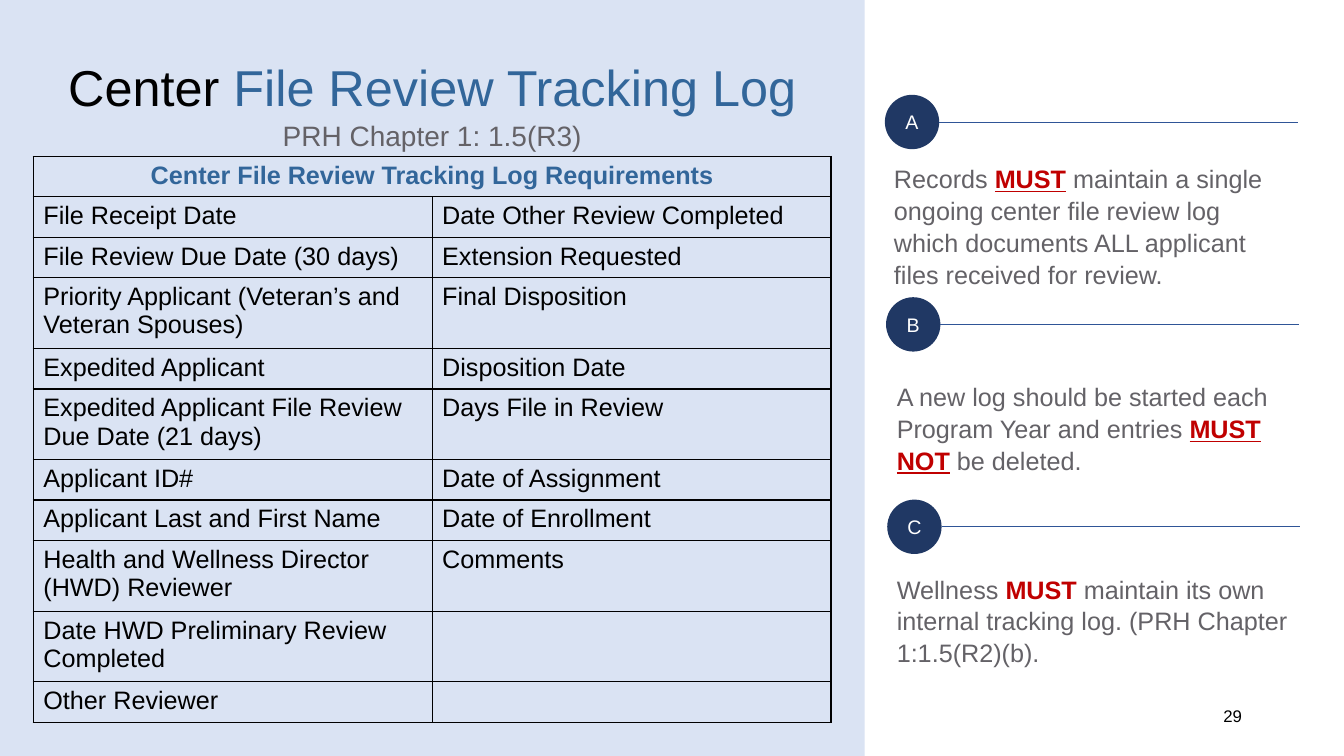
from lxml import etree
from pptx import Presentation
from pptx import util as u
from pptx.dml.color import RGBColor
from pptx.enum import shapes, text
from pptx.oxml.ns import qn

COLORS = {
    "panel": "DAE3F3", "black": "000000", "white": "FFFFFF", "blue": "32669A",
    "grey": "646267", "red": "C00000", "navy": "203864", "line": "2F5597",
}
REQUIREMENTS = [
    ("File Receipt Date", "Date Other Review Completed"),
    ("File Review Due Date (30 days)", "Extension Requested"),
    ("Priority Applicant (Veteran’s and Veteran Spouses)", "Final Disposition"),
    ("Expedited Applicant", "Disposition Date"),
    ("Expedited Applicant File Review Due Date (21 days)", "Days File in Review"),
    ("Applicant ID#", "Date of Assignment"),
    ("Applicant Last and First Name", "Date of Enrollment"),
    ("Health and Wellness Director (HWD) Reviewer", "Comments"),
    ("Date HWD Preliminary Review Completed", ""),
    ("Other Reviewer", ""),
]
ONE_LINE, TWO_LINES = 1.02, 1.78
LONGEST_LINE = 30
CENTER, RIGHT = text.PP_ALIGN.CENTER, text.PP_ALIGN.RIGHT


def color(name):
    return RGBColor.from_string(COLORS[name])


class SlideBuilder:
    def __init__(self, page, font="Arial"):
        self.page = page
        self.font = font

    def add_spans(self, para, spans, size, align=None, spacing=None):
        """Fill a paragraph from (words, colour, bold, underline) spans."""
        para.alignment = align
        para.line_spacing = spacing
        for words, tint, bold, underline in spans:
            span = para.add_run()
            span.text = words
            span.font.name = self.font
            span.font.size = u.Pt(size)
            span.font.bold = bold
            span.font.underline = underline
            span.font.color.rgb = color(tint)

    def shape(self, kind, left, top, width, height, fill):
        shape = self.page.shapes.add_shape(
            kind, u.Cm(left), u.Cm(top), u.Cm(width), u.Cm(height))
        shape.shadow.inherit = False
        shape.fill.solid()
        shape.fill.fore_color.rgb = color(fill)
        shape.line.fill.background()
        return shape

    def badge(self, letter, left, top, size):
        badge = self.shape(shapes.MSO_SHAPE.OVAL, left, top, size, size, "navy")
        frame = badge.text_frame
        frame.vertical_anchor = text.MSO_ANCHOR.MIDDLE
        self.add_spans(frame.paragraphs[0], [plain(letter, "white")], 14, CENTER)

    def rule(self, left, top, length):
        rule = self.page.shapes.add_connector(
            shapes.MSO_CONNECTOR.STRAIGHT,
            u.Cm(left), u.Cm(top), u.Cm(left + length), u.Cm(top))
        rule.line.color.rgb = color("line")
        rule.line.width = u.Pt(0.5)
        etree.SubElement(rule._element.spPr, qn("a:effectLst"))

    def textbox(self, left, top, width, height, lines, align=None, spacing=None):
        """Add a text box whose lines are (spans, size) pairs."""
        box = self.page.shapes.add_textbox(
            u.Cm(left), u.Cm(top), u.Cm(width), u.Cm(height))
        frame = box.text_frame
        frame.word_wrap = True
        for index, (spans, size) in enumerate(lines):
            para = frame.add_paragraph() if index else frame.paragraphs[0]
            self.add_spans(para, spans, size, align, spacing)

    def border(self, cell):
        properties = cell._tc.get_or_add_tcPr()
        for index, side in enumerate(("a:lnL", "a:lnR", "a:lnT", "a:lnB")):
            edge = etree.Element(qn(side), w=str(u.Pt(1)))
            fill = etree.SubElement(edge, qn("a:solidFill"))
            etree.SubElement(fill, qn("a:srgbClr"), val=COLORS["black"])
            properties.insert(index, edge)

    def table(self, left, top, width, heading, rows):
        heights = [ONE_LINE] + [
            TWO_LINES if len(row[0]) > LONGEST_LINE else ONE_LINE for row in rows]
        table = self.page.shapes.add_table(
            len(heights), 2, u.Cm(left), u.Cm(top),
            u.Cm(width), u.Cm(sum(heights))).table
        table.first_row = table.horz_banding = False
        for row, height in zip(table.rows, heights):
            row.height = u.Cm(height)
        for cell in table.iter_cells():
            cell.fill.background()
            self.border(cell)
        table.cell(0, 0).merge(table.cell(0, 1))
        self.add_spans(table.cell(0, 0).text_frame.paragraphs[0],
                       [(heading, "blue", True, False)], 18, CENTER)
        for row_index, row in enumerate(rows, start=1):
            for column, words in enumerate(row):
                para = table.cell(row_index, column).text_frame.paragraphs[0]
                para.font.size = u.Pt(18)
                if words:
                    self.add_spans(para, [plain(words, "black")], 18)


def plain(words, tint="grey"):
    return words, tint, False, False


def strong(words, underline=True):
    return words, "red", True, underline


def main():
    deck = Presentation()
    deck.slide_width, deck.slide_height = u.Cm(33.87), u.Cm(19.05)
    builder = SlideBuilder(deck.slides.add_slide(deck.slide_layouts[6]))

    panel_width = 21.79
    builder.shape(shapes.MSO_SHAPE.RECTANGLE, 0, 0, panel_width, 19.05, "panel")
    builder.textbox(0, 1.22, panel_width, 2.64, [
        ([plain("Center", "black"), plain(" File Review Tracking Log", "blue")], 36),
        ([plain("PRH Chapter 1: 1.5(R3)")], 20),
    ], CENTER, 1.05)
    builder.table(0.84, 3.94, 20.1,
                  "Center File Review Tracking Log Requirements", REQUIREMENTS)

    notes = [
        ("A", 22.28, 3.96, 3.33, [
            plain("Records "), strong("MUST"),
            plain(" maintain a single ongoing center file review log which "
                  "documents ALL applicant files received for review.")]),
        ("B", 22.35, 9.45, 2.57, [
            plain("A new log should be started each Program Year and entries "),
            strong("MUST"), plain(" "), strong("NOT"), plain(" be deleted.")]),
        ("C", 22.35, 14.3, 2.57, [
            plain("Wellness "), strong("MUST", underline=False),
            plain(" maintain its own internal tracking log. "
                  "(PRH Chapter 1:1.5(R2)(b).")]),
    ]
    badge_size = 1.37
    for index, (letter, left, top, height, spans) in enumerate(notes):
        badge_left = 22.3 + 0.03 * index
        badge_top = 2.39 + 5.1 * index
        builder.badge(letter, badge_left, badge_top, badge_size)
        builder.rule(badge_left + badge_size, badge_top + badge_size / 2, 9.04)
        builder.textbox(left, top, 10.44, height, [(spans, 18)], spacing=1.05)

    builder.textbox(23.93, 17.65, 7.62, 1.02, [([plain("29", "black")], 12)], RIGHT)
    deck.save("out.pptx")


if __name__ == "__main__":
    main()
